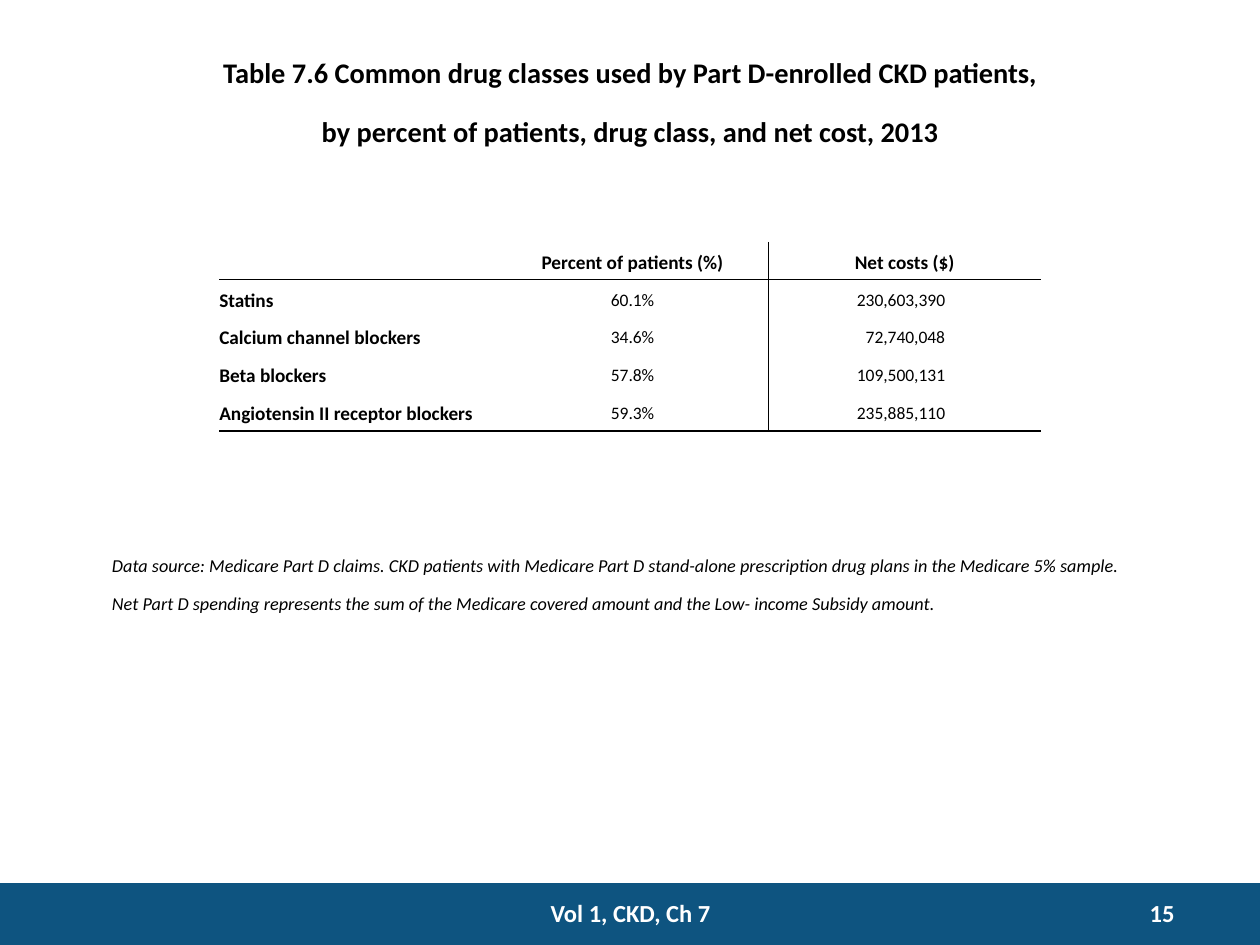
from lxml import etree
from pptx import Presentation
from pptx.dml.color import RGBColor
from pptx.enum.shapes import MSO_SHAPE
from pptx.enum.text import MSO_ANCHOR, PP_ALIGN
from pptx.oxml.ns import qn
from pptx.util import Inches, Pt

BLACK = RGBColor(0, 0, 0)
WHITE = RGBColor(255, 255, 255)
BLUE = RGBColor(0x0E, 0x54, 0x80)
LEFT, CENTER, RIGHT = PP_ALIGN.LEFT, PP_ALIGN.CENTER, PP_ALIGN.RIGHT
RECT = MSO_SHAPE.RECTANGLE
MIDDLE = MSO_ANCHOR.MIDDLE
FONT = "Calibri"

prs = Presentation()
prs.slide_width, prs.slide_height = Inches(10), Inches(7.5)
W, H = prs.slide_width, prs.slide_height
s = prs.slides.add_slide(prs.slide_layouts[6])


def style(p, size, color, align, bold=False, italic=False, raised=False):
    p.alignment = align
    for r in p.runs:
        f = r.font
        f.name, f.size, f.bold, f.italic = FONT, Pt(size), bold, italic
        f.color.rgb = color
        if raised:
            r._r.get_or_add_rPr().set("baseline", "30000")


def set_border(cell, side, shown):
    ln = etree.SubElement(cell._tc.get_or_add_tcPr(), qn("a:ln" + side), w=str(Pt(1)))
    if shown:
        fill = etree.SubElement(ln, qn("a:solidFill"))
        etree.SubElement(fill, qn("a:srgbClr"), val=str(BLACK))
    else:
        etree.SubElement(ln, qn("a:noFill"))


# Footer band
band = s.shapes.add_shape(RECT, 0, Inches(7.01), W, H - Inches(7.01))
band.shadow.inherit = False
band.fill.solid()
band.fill.fore_color.rgb = BLUE
band.line.fill.background()

# Data source, title, footer and page number
title = ("Table 7.6 Common drug classes used by Part D-enrolled CKD patients,\n"
         "by percent of patients, drug class, and net cost, 2013")
source = ("Data source: Medicare Part D claims. CKD patients with Medicare Part D "
          "stand-alone prescription drug plans in the Medicare 5% sample. "
          "Net Part D spending represents the sum of the Medicare covered amount "
          "and the Low- income Subsidy amount.")
texts = [
    (source, (0.79, 4.32, 8.42, 0.71), 18, BLACK, LEFT, dict(italic=True, raised=True)),
    (title, (0, 0.34, 10, 0.73), 28, BLACK, CENTER, dict(bold=True, raised=True)),
    ("Vol 1, CKD, Ch 7", (3.92, 7.08, 2.17, 0.33), 14, WHITE, CENTER, dict(bold=True)),
    ("15", (8.42, 7.08, 1, 0.3), 14, WHITE, RIGHT, dict(bold=True)),
]
for text, box, size, color, align, look in texts:
    tf = s.shapes.add_textbox(*[Inches(v) for v in box]).text_frame
    tf.word_wrap = True
    tf.text = text
    for p in tf.paragraphs:
        style(p, size, color, align, **look)

# Drug class table
rows = [
    ("", "Percent of patients (%)", "Net costs ($)"),
    ("Statins", "60.1%", "230,603,390"),
    ("Calcium channel blockers", "34.6%", "72,740,048"),
    ("Beta blockers", "57.8%", "109,500,131"),
    ("Angiotensin II receptor blockers", "59.3%", "235,885,110"),
]
col_widths = (2.2, 2.16, 2.16)
row_height = 0.3
body_aligns = (LEFT, CENTER, RIGHT)
body_margins = ((0, 0.08), (0.07, 0.07), (0.08, 0.76))
last = len(rows) - 1

table = s.shapes.add_table(len(rows), len(col_widths), Inches(1.74), Inches(1.92),
                           Inches(sum(col_widths)), Inches(row_height * len(rows))).table
table.first_row = table.horz_banding = False
for col, width in zip(table.columns, col_widths):
    col.width = Inches(width)

for i, row in enumerate(rows):
    table.rows[i].height = Inches(row_height)
    for j, text in enumerate(row):
        cell = table.cell(i, j)
        header = i == 0
        margins = body_margins[1] if header else body_margins[j]
        cell.margin_left, cell.margin_right = [Inches(m) for m in margins]
        cell.margin_top = cell.margin_bottom = 0
        cell.vertical_anchor = MIDDLE

        # Rules under the header and last row, and before the cost column
        set_border(cell, "L", j == 2)
        set_border(cell, "R", j == 1)
        set_border(cell, "T", i == 1)
        set_border(cell, "B", i in (0, last))
        cell.fill.background()

        p = cell.text_frame.paragraphs[0]
        p.line_spacing = 1.15
        if text:
            p.text = text
            bold = header or j == 0
            style(p, 11 if bold else 10, BLACK, CENTER if header else body_aligns[j], bold)
        else:
            etree.SubElement(p._p, qn("a:endParaRPr"), sz="1100")

prs.save("out.pptx")
